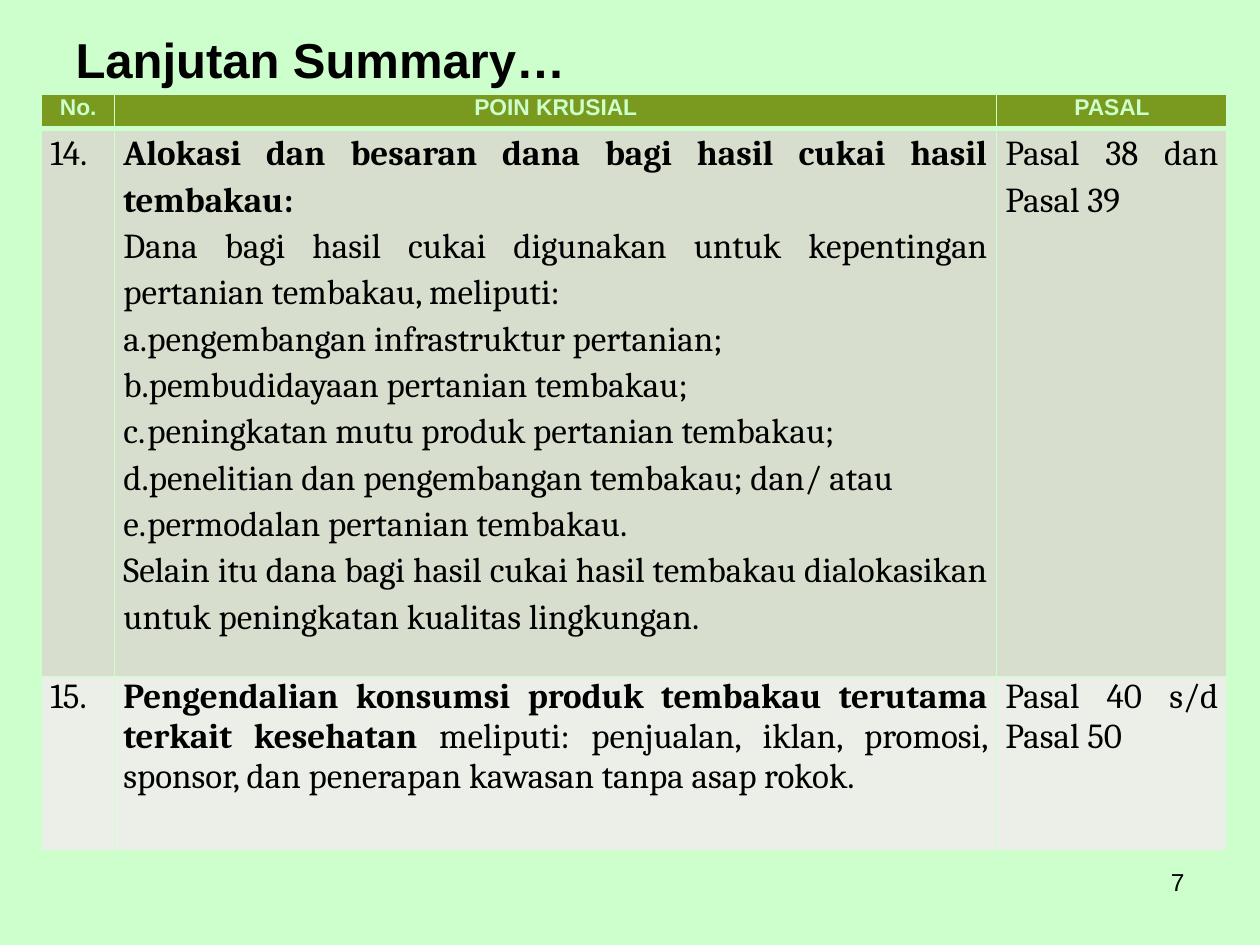
from dataclasses import dataclass, field

import pptx
import pptx.dml.color
import pptx.enum.text
import pptx.oxml
import pptx.oxml.ns
import pptx.util
from pptx.util import Inches

ALIGN = pptx.enum.text.PP_ALIGN
ANCHOR = pptx.enum.text.MSO_ANCHOR
MINT, OLIVE, BLACK = "CCFFCC", "7A991F", "000000"
COL_WIDTHS = (0.58, 7, 1.83)
ROW_HEIGHTS = (0.27, 4.35, 1.38)


@dataclass
class Para:
    """One paragraph: a bold lead followed by plain text."""
    text: str = ""
    lead: str = ""
    lettered: bool = False


@dataclass
class Point:
    number: str
    paras: list[Para] = field(default_factory=list)
    articles: str = ""
    fill: str = "FFFFFF"
    spacing: float = 1.0


POINTS = [
    Point("14.", [
        Para(lead="Alokasi dan besaran dana bagi hasil cukai hasil tembakau:"),
        Para("Dana bagi hasil cukai digunakan untuk kepentingan pertanian "
             "tembakau, meliputi:"),
        Para("pengembangan infrastruktur pertanian;", lettered=True),
        Para("pembudidayaan pertanian tembakau;", lettered=True),
        Para("peningkatan mutu produk pertanian tembakau;", lettered=True),
        Para("penelitian dan pengembangan tembakau; dan/ atau", lettered=True),
        Para("permodalan pertanian tembakau.", lettered=True),
        Para("Selain itu dana bagi hasil cukai hasil tembakau dialokasikan "
             "untuk peningkatan kualitas lingkungan."),
    ], "Pasal 38 dan Pasal 39", "D7DECD", 1.15),
    Point("15.", [
        Para("meliputi: penjualan, iklan, promosi, sponsor, dan penerapan "
             "kawasan tanpa asap rokok.",
             lead="Pengendalian konsumsi produk tembakau terutama terkait kesehatan "),
    ], "Pasal 40 s/d Pasal 50", "ECEFE8"),
]


def rgb(color: str) -> pptx.dml.color.RGBColor:
    return pptx.dml.color.RGBColor.from_string(color)


def add_text(p, text: str, size: float = 20, font: str = "Cambria",
             color: str = BLACK, bold: bool = False, align=None,
             spacing: float | None = None) -> None:
    r = p.add_run()
    r.text = text
    r.font.size = pptx.util.Pt(size)
    r.font.name = font
    r.font.bold = bold
    r.font.color.rgb = rgb(color)
    if align is not None:
        p.alignment = align
    if spacing is not None:
        p.line_spacing = spacing


def add_letter(p) -> None:
    """Number the paragraph a., b., c. with a hanging indent."""
    ppr = p._p.get_or_add_pPr()
    ppr.set("marL", str(Inches(0.19)))
    ppr.set("indent", str(-Inches(0.19)))
    ns = pptx.oxml.ns.nsdecls("a")
    ppr.append(pptx.oxml.parse_xml(f'<a:buAutoNum {ns} type="alphaLcPeriod"/>'))
    stops = "".join(f'<a:tab pos="{Inches(x)}" algn="l"/>' for x in (0.19, 0.43))
    ppr.append(pptx.oxml.parse_xml(f"<a:tabLst {ns}>{stops}</a:tabLst>"))


def format_cell(cell, fill: str, bottom: float = 1, top: float = 1) -> None:
    """Set fill, margins and borders; border widths are in points."""
    cell.margin_left = cell.margin_right = Inches(0.07)
    cell.margin_top = cell.margin_bottom = 0
    cell.fill.solid()
    cell.fill.fore_color.rgb = rgb(fill)
    tcpr = cell._tc.get_or_add_tcPr()
    for i, (side, width) in enumerate(zip("LRTB", (1, 1, top, bottom))):
        tcpr.insert(i, pptx.oxml.parse_xml(
            f'<a:ln{side} {pptx.oxml.ns.nsdecls("a")} w="{pptx.util.Pt(width)}">'
            f'<a:solidFill><a:srgbClr val="{MINT}"/></a:solidFill></a:ln{side}>'))


def fill_point(cells, point: Point) -> None:
    number, body, articles = cells
    for cell in cells:
        format_cell(cell, point.fill, top=3 if point is POINTS[0] else 1)
    add_text(number.text_frame.paragraphs[0], point.number, spacing=point.spacing)
    add_text(articles.text_frame.paragraphs[0], point.articles,
             align=ALIGN.JUSTIFY, spacing=point.spacing)
    tf = body.text_frame
    for i, para in enumerate(point.paras):
        p = tf.add_paragraph() if i else tf.paragraphs[0]
        if para.lettered:
            add_letter(p)
        for text, bold in ((para.lead, True), (para.text, False)):
            if text:
                add_text(p, text, bold=bold, align=ALIGN.JUSTIFY,
                         spacing=point.spacing)


def add_points_table(s) -> None:
    table = s.shapes.add_table(
        len(ROW_HEIGHTS), len(COL_WIDTHS), Inches(0.33), Inches(0.75),
        Inches(sum(COL_WIDTHS)), Inches(sum(ROW_HEIGHTS))).table
    for col, width in zip(table.columns, COL_WIDTHS):
        col.width = Inches(width)
    for row, height in zip(table.rows, ROW_HEIGHTS):
        row.height = Inches(height)
    header, *body = [list(row.cells) for row in table.rows]
    for cell, text in zip(header, ("No.", "POIN KRUSIAL", "PASAL")):
        format_cell(cell, OLIVE, bottom=3)
        add_text(cell.text_frame.paragraphs[0], text, size=13, font="Arial",
                 color=MINT, bold=True, align=ALIGN.CENTER)
    for cells, point in zip(body, POINTS):
        fill_point(cells, point)


def main() -> None:
    prs = pptx.Presentation()
    prs.slide_width, prs.slide_height = Inches(10), Inches(7.5)
    s = prs.slides.add_slide(prs.slide_layouts[5])
    s.background.fill.solid()
    s.background.fill.fore_color.rgb = rgb(MINT)

    title = s.shapes.title
    title.left, title.top = Inches(0.5), Inches(0.3)
    title.width, title.height = Inches(9), Inches(0.45)
    tf = title.text_frame
    tf.vertical_anchor = ANCHOR.BOTTOM
    tf.auto_size = pptx.enum.text.MSO_AUTO_SIZE.NONE
    add_text(tf.paragraphs[0], "Lanjutan Summary…", size=28, font="Arial",
             bold=True, align=ALIGN.LEFT)

    page = s.shapes.add_textbox(Inches(7.17), Inches(6.83),
                                Inches(2.33), Inches(0.52))
    page.text_frame.word_wrap = True
    add_text(page.text_frame.paragraphs[0], "7", size=14, font="Arial",
             align=ALIGN.RIGHT)

    add_points_table(s)
    prs.save("out.pptx")


if __name__ == "__main__":
    main()
